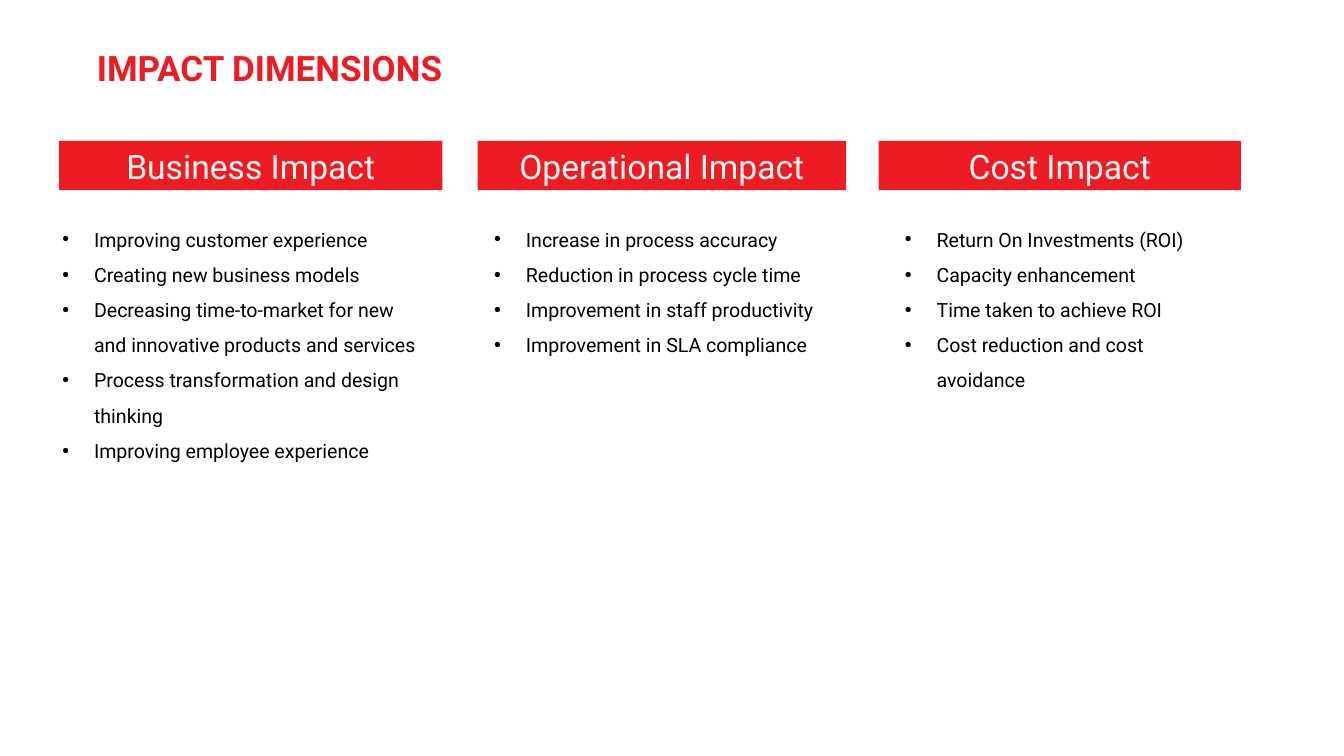
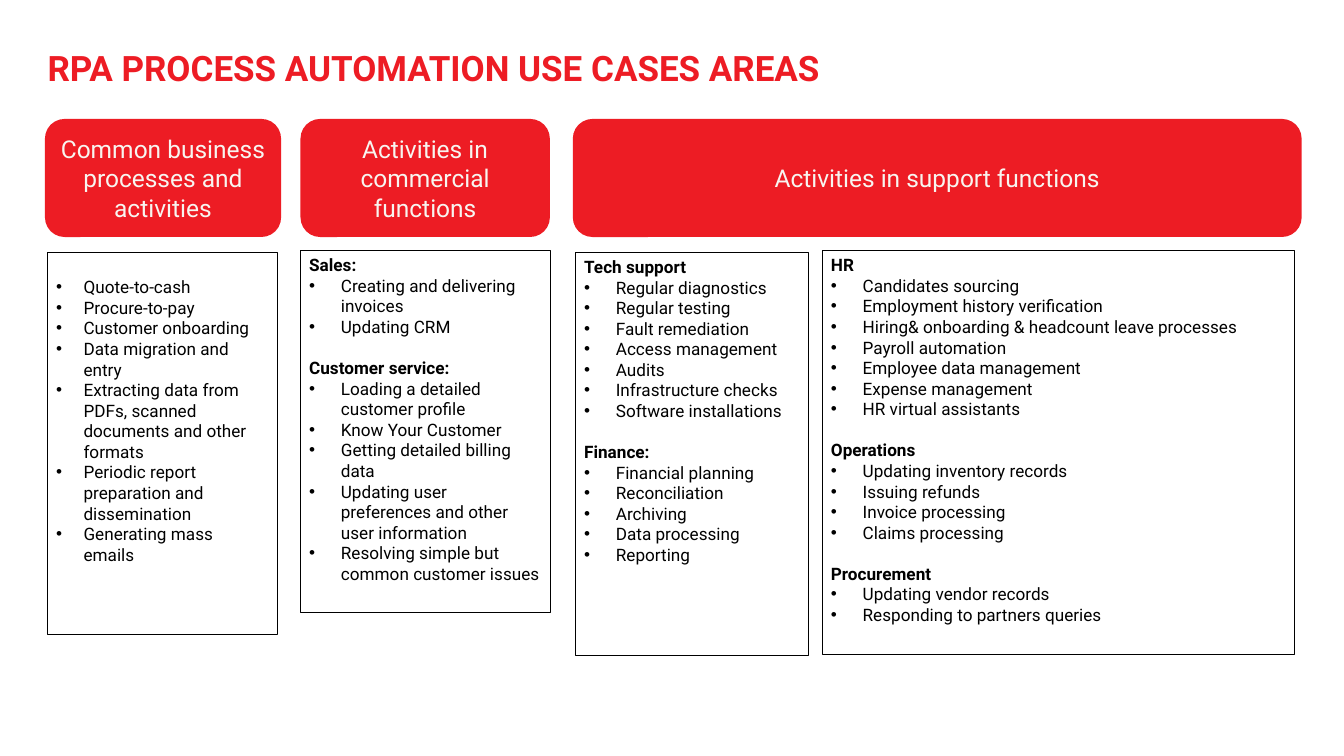
import pptx
import pptx.util
import pptx.dml.color
import pptx.enum.shapes
import pptx.enum.text
import pptx.oxml.ns
import lxml.etree

Inches = pptx.util.Inches
Pt = pptx.util.Pt
RGB = pptx.dml.color.RGBColor.from_string
MSO_SHAPE = pptx.enum.shapes.MSO_SHAPE
ANCHOR = pptx.enum.text.MSO_ANCHOR
ALIGN = pptx.enum.text.PP_ALIGN
qn = pptx.oxml.ns.qn

COLORS = {"red": "ED1C24", "cream": "F8F5F0", "black": "000000"}
FONT = "Roboto"
TITLE_SIZE = 28.6
GROUP_GAP = 16.8

prs = pptx.Presentation()
prs.slide_width, prs.slide_height = Inches(15.25), Inches(8.58)
blank = prs.slide_layouts[6]


def add_text(s, at, text, size, color, shape=None, fill=None, bold=False):
    """Add a text box, or the given preset shape, holding one paragraph."""
    at = [Inches(v) for v in at]
    if shape is None:
        sp = s.shapes.add_textbox(*at)
    else:
        sp = s.shapes.add_shape(shape, *at)
        sp.shadow.inherit = False
        sp.fill.solid()
        sp.fill.fore_color.rgb = RGB(COLORS[fill])
        sp.line.fill.background()
    tf = sp.text_frame
    tf.word_wrap = True
    tf.text = text
    p = tf.paragraphs[0]
    p.alignment = ALIGN.LEFT if shape is None else ALIGN.CENTER
    font = p.runs[0].font
    font.name, font.size, font.bold = FONT, Pt(size), bold
    font.color.rgb = RGB(COLORS[color])
    return sp


def add_list(s, at, groups, size, indent=0.36, spacing=None, border=False):
    """Add a box of bulleted groups; each group is (heading or None, items)."""
    sp = s.shapes.add_textbox(*[Inches(v) for v in at])
    if border:
        sp.line.color.rgb = RGB(COLORS["black"])
        sp.line.width = Pt(0.25)
    tf = sp.text_frame
    tf.word_wrap = True
    p = None
    for heading, items in groups:
        lines = ([heading] if heading else []) + items
        for text in lines:
            is_heading = text == heading
            p = tf.paragraphs[0] if p is None else tf.add_paragraph()
            p.text = text
            if is_heading and heading != groups[0][0]:
                p.space_before = Pt(GROUP_GAP)
            if spacing:
                p.line_spacing = spacing
            if not is_heading:
                pPr = p._p.get_or_add_pPr()
                pPr.set("marL", str(Inches(indent)))
                pPr.set("indent", str(-Inches(indent)))
                lxml.etree.SubElement(pPr, qn("a:buFont")).set("typeface", "Arial")
                lxml.etree.SubElement(pPr, qn("a:buChar")).set("char", "•")
            font = p.runs[0].font
            font.name, font.size, font.bold = FONT, Pt(size), is_heading
            font.color.rgb = RGB(COLORS["black"])
    return sp


# Slides and titles
slides = []
for title, left in [
    ("IMPACT DIMENSIONS", 0.71),
    ("RPA PROCESS AUTOMATION USE CASES AREAS", 0.15),
]:
    s = prs.slides.add_slide(blank)
    sp = add_text(s, (left, 0.43, 13.07, 0.64), title, TITLE_SIZE, "red", bold=True)
    tf = sp.text_frame
    tf.vertical_anchor = ANCHOR.BOTTOM
    tf.margin_left, tf.margin_right = Inches(0.39), Inches(0.13)
    tf.margin_top = tf.margin_bottom = Inches(0.07)
    slides.append(s)
impact, use_cases = slides

# Impact dimensions: (heading, left, width), (list left, width, height), items
dimensions = [
    (("Business Impact", 0.67, 4.35), (0.61, 4.27, 2.93), [
        "Improving customer experience",
        "Creating new business models",
        "Decreasing time-to-market for new and innovative products and services",
        "Process transformation and design thinking",
        "Improving employee experience",
    ]),
    (("Operational Impact", 5.42, 4.18), (5.51, 3.94, 1.72), [
        "Increase in process accuracy",
        "Reduction in process cycle time",
        "Improvement in staff productivity",
        "Improvement in SLA compliance",
    ]),
    (("Cost Impact", 9.97, 4.11), (10.17, 3.76, 2.12), [
        "Return On Investments (ROI)",
        "Capacity enhancement",
        "Time taken to achieve ROI",
        "Cost reduction and cost avoidance",
    ]),
]
for (heading, left, width), (list_left, list_width, height), items in dimensions:
    add_text(impact, (left, 1.6, width, 0.56), heading, 27.5, "cream",
             MSO_SHAPE.RECTANGLE, "red")
    add_list(impact, (list_left, 2.4, list_width, height), [(None, items)], 16,
             spacing=1.5)

# Use case areas
for heading, left, width in [
    ("Common business processes and activities", 0.51, 2.68),
    ("Activities in commercial functions", 3.41, 2.83),
    ("Activities in support functions", 6.5, 8.27),
]:
    add_text(use_cases, (left, 1.35, width, 1.34), heading, 20, "cream",
             MSO_SHAPE.ROUNDED_RECTANGLE, "red")

common = add_list(use_cases, (0.54, 2.86, 2.6, 4.34), [
    (None, [
        "Quote-to-cash",
        "Procure-to-pay",
        "Customer onboarding",
        "Data migration and entry",
        "Extracting data from PDFs, scanned documents and other formats",
        "Periodic report preparation and dissemination",
        "Generating mass emails",
    ]),
], 14, indent=0.31, border=True)
common.text_frame.margin_top = Inches(0.28)

areas = [
    ((3.41, 2.84, 2.83, 4.11), [
        ("Sales:", ["Creating and delivering invoices", "Updating CRM"]),
        ("Customer service:", [
            "Loading a detailed customer profile",
            "Know Your Customer",
            "Getting detailed billing data",
            "Updating user preferences and other user information",
            "Resolving simple but common customer issues",
        ]),
    ]),
    ((6.53, 2.86, 2.64, 4.58), [
        ("Tech support", [
            "Regular diagnostics",
            "Regular testing",
            "Fault remediation",
            "Access management",
            "Audits",
            "Infrastructure checks",
            "Software installations",
        ]),
        ("Finance:", [
            "Financial planning",
            "Reconciliation",
            "Archiving",
            "Data processing",
            "Reporting",
        ]),
    ]),
    ((9.33, 2.84, 5.35, 4.58), [
        ("HR", [
            "Candidates sourcing",
            "Employment history verification",
            "Hiring& onboarding & headcount leave processes",
            "Payroll automation",
            "Employee data management",
            "Expense management",
            "HR virtual assistants",
        ]),
        ("Operations", [
            "Updating inventory records",
            "Issuing refunds",
            "Invoice processing",
            "Claims processing",
        ]),
        ("Procurement", [
            "Updating vendor records",
            "Responding to partners queries",
        ]),
    ]),
]
for at, groups in areas:
    add_list(use_cases, at, groups, 14, border=True)

prs.save("out.pptx")
